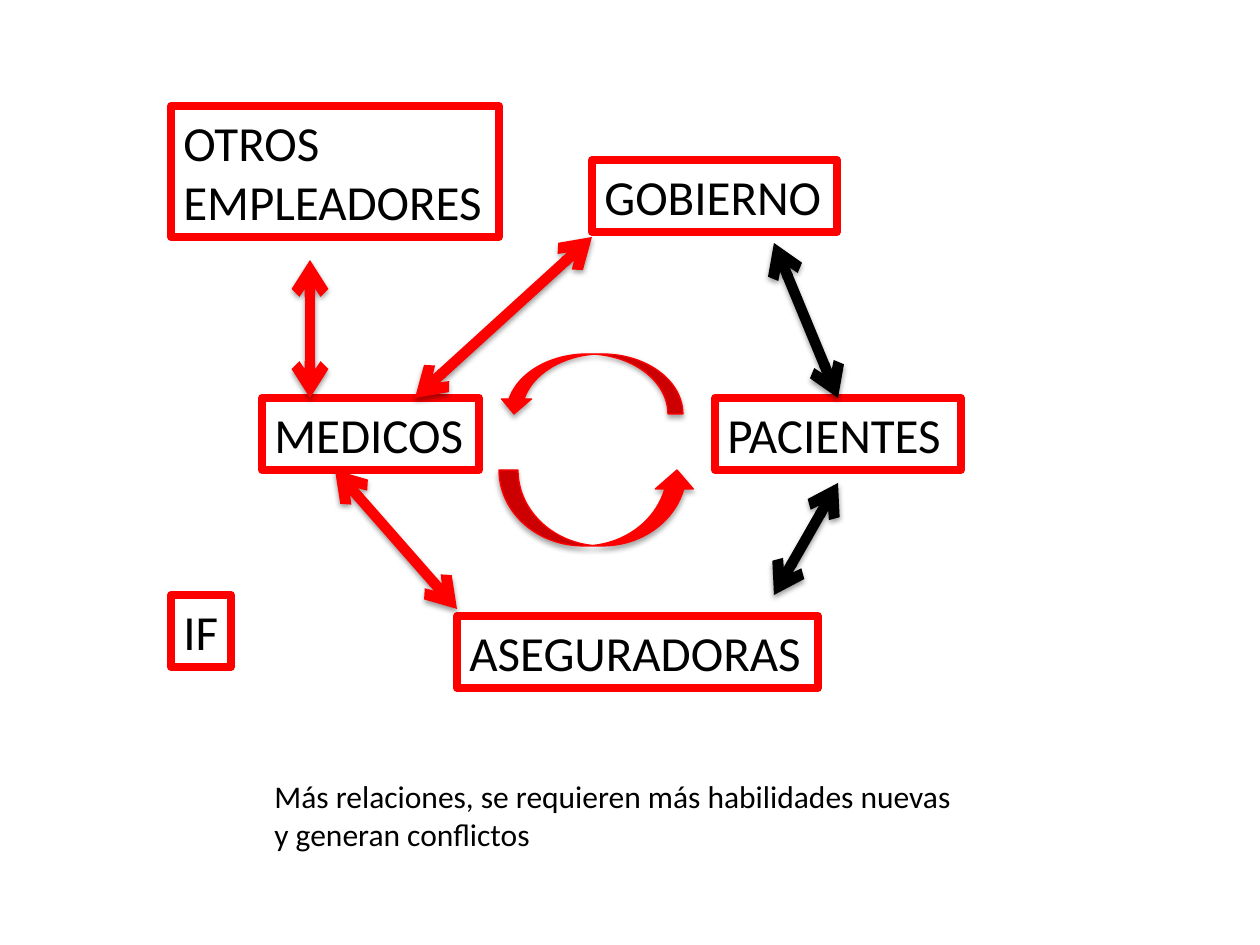
from pptx import Presentation
from pptx.dml.color import RGBColor
from pptx.enum.shapes import MSO_CONNECTOR as CONN, MSO_SHAPE as SHAPE
from pptx.enum.text import MSO_AUTO_SIZE as AUTO
from pptx.oxml import parse_xml
from pptx.oxml.ns import nsdecls
from pptx.util import Emu, Pt

RED = RGBColor(0xFF, 0x00, 0x00)
BLACK = RGBColor(0x00, 0x00, 0x00)
WHITE = RGBColor(0xFF, 0xFF, 0xFF)

BOXES = [
    ("MEDICOS", 262, 398, 217, 72),
    ("ASEGURADORAS", 457, 616, 361, 72),
    ("GOBIERNO", 592, 160, 245, 72),
    ("PACIENTES", 715, 398, 246, 72),
    ("OTROS \vEMPLEADORES", 171, 106, 328, 131),
    ("IF", 171, 595, 60, 72),
]
CYCLE = [
    (SHAPE.CURVED_UP_ARROW, 499, 470, 197, 76, False),
    (SHAPE.CURVED_DOWN_ARROW, 499, 354, 184, 60, True),
]
RELATIONS = [
    (415, 398, 592, 237, RED),
    (310, 398, 310, 260, RED),
    (457, 609, 335, 470, RED),
    (774, 595, 838, 483, BLACK),
    (838, 398, 774, 243, BLACK),
]
CAPTION = "Más relaciones, se requieren más habilidades nuevas\ny generan conflictos"


class Deck:
    """Hold the style and the current slide, and draw each kind of element."""

    scale = 914400 / 126
    font = {"name": "Calibri"}
    frame = {"word_wrap": False, "auto_size": AUTO.SHAPE_TO_FIT_TEXT}

    def __init__(self, width, height):
        self.prs = Presentation()
        self.prs.slide_width, self.prs.slide_height = self.emu(width, height)
        self.shapes = self.prs.slides.add_slide(self.prs.slide_layouts[6]).shapes

    def emu(self, *lengths):
        return [Emu(round(n * self.scale)) for n in lengths]

    def apply(self, target, values):
        for name, value in values.items():
            setattr(target, name, value)

    def outline(self, sp, color, width):
        sp.line.color.rgb = color
        sp.line.width = Pt(width)

    def shadow(self, sp, dist, alpha):
        sp._element.spPr.append(parse_xml(
            f'<a:effectLst {nsdecls("a")}><a:outerShdw blurRad="{Pt(3.1)}" '
            f'dist="{Pt(dist)}" dir="5400000" rotWithShape="0">'
            f'<a:srgbClr val="{BLACK}"><a:alpha val="{alpha * 1000}"/></a:srgbClr>'
            '</a:outerShdw></a:effectLst>'))

    def text(self, text, x, y, w, h, size):
        sp = self.shapes.add_textbox(*self.emu(x, y, w, h))
        tf = sp.text_frame
        tf.text = text
        self.apply(tf, self.frame)
        for p in tf.paragraphs:
            for r in p.runs:
                self.apply(r.font, {**self.font, "size": Pt(size)})
                r.font.color.rgb = BLACK
        return sp

    def box(self, text, x, y, w, h):
        sp = self.text(text, x, y, w, h, 28)
        sp.fill.solid()
        sp.fill.fore_color.rgb = WHITE
        self.outline(sp, RED, 4.5)

    def curved_arrow(self, kind, x, y, w, h, flip):
        sp = self.shapes.add_shape(kind, *self.emu(x, y, w, h))
        sp.fill.solid()
        sp.fill.fore_color.rgb = RED
        self.outline(sp, RED, 0.75)
        if flip:
            sp._element.spPr.xfrm.set("flipH", "1")
        self.shadow(sp, 1.8, 35)

    def double_arrow(self, x1, y1, x2, y2, color):
        sp = self.shapes.add_connector(CONN.STRAIGHT, *self.emu(x1, y1, x2, y2))
        self.outline(sp, color, 6)
        for end in ("headEnd", "tailEnd"):
            sp.line._ln.append(parse_xml(f'<a:{end} {nsdecls("a")} type="arrow"/>'))
        self.shadow(sp, 1.6, 38)


def main():
    deck = Deck(1260, 945)
    for box in BOXES:
        deck.box(*box)
    for arrow in CYCLE:
        deck.curved_arrow(*arrow)
    for relation in RELATIONS:
        deck.double_arrow(*relation)
    deck.text(CAPTION, 262, 771, 711, 89, 18)
    deck.prs.save("out.pptx")


if __name__ == "__main__":
    main()
